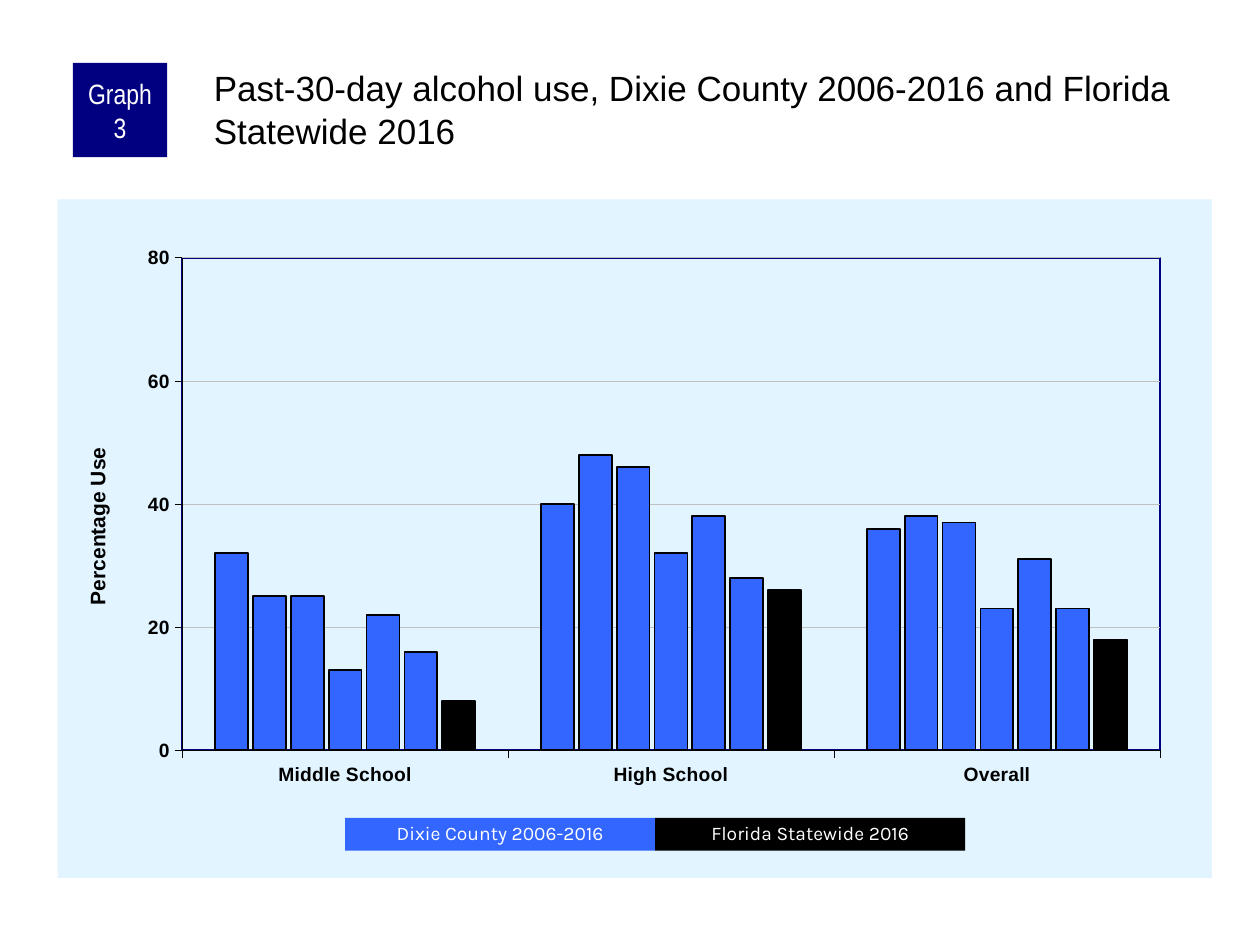
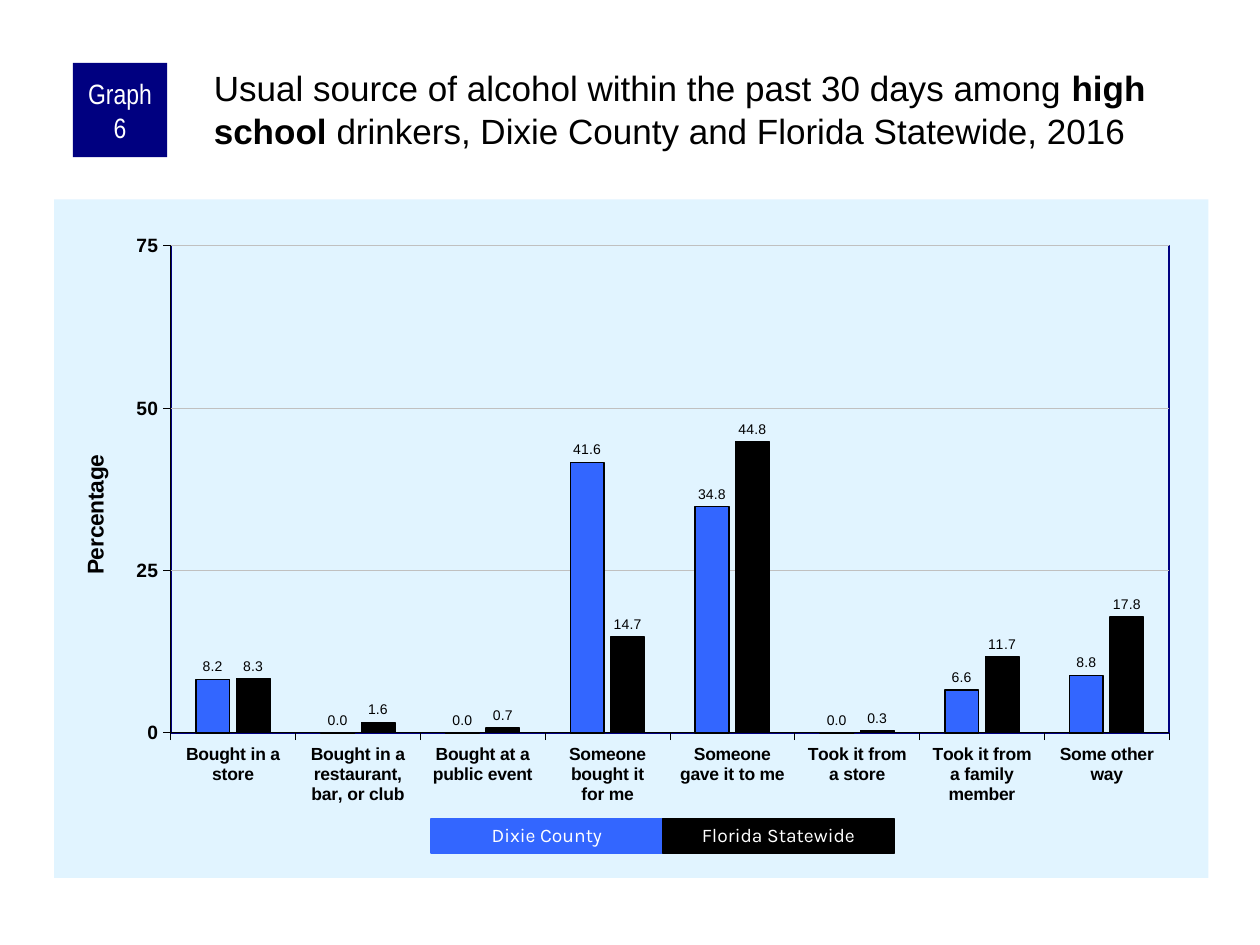
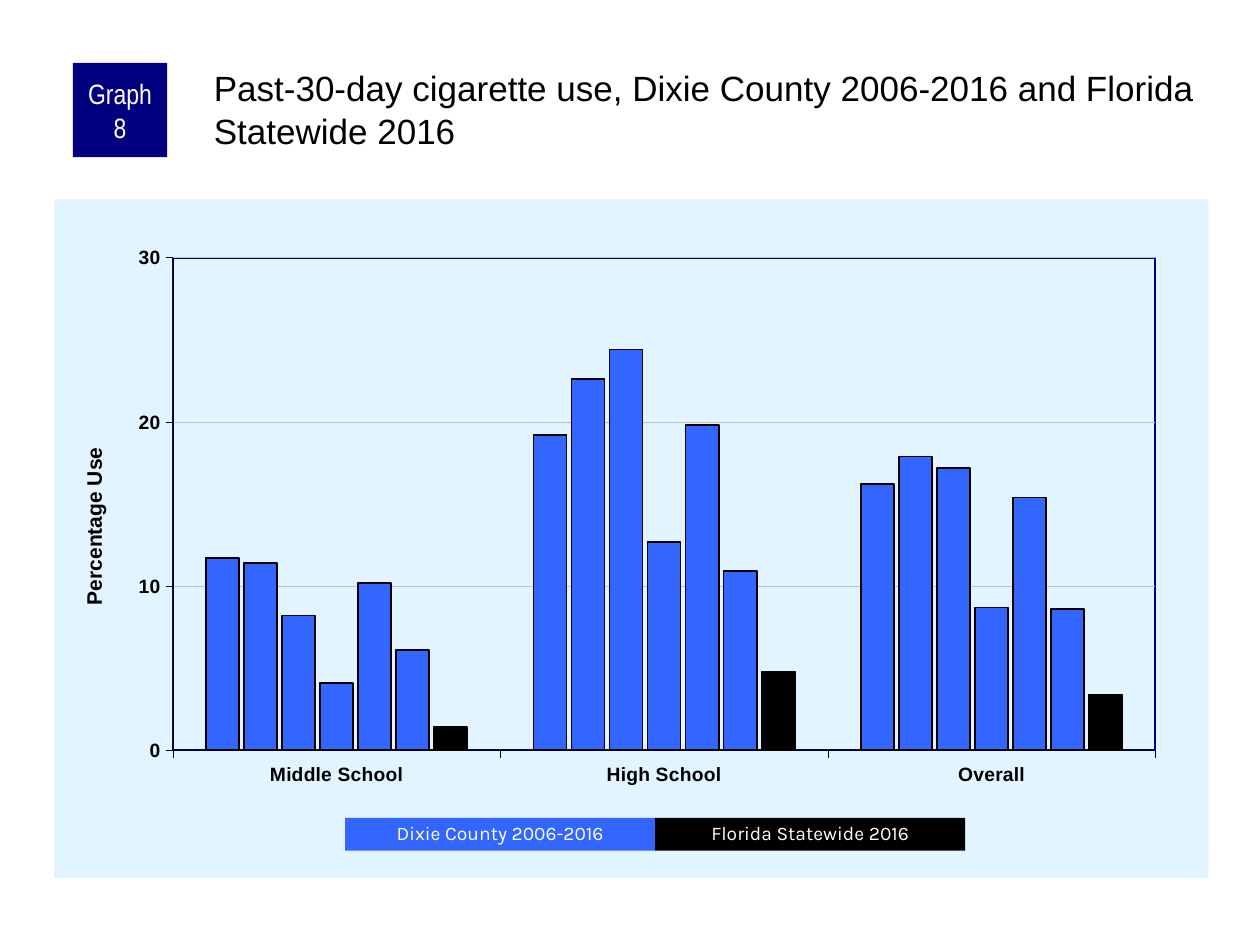
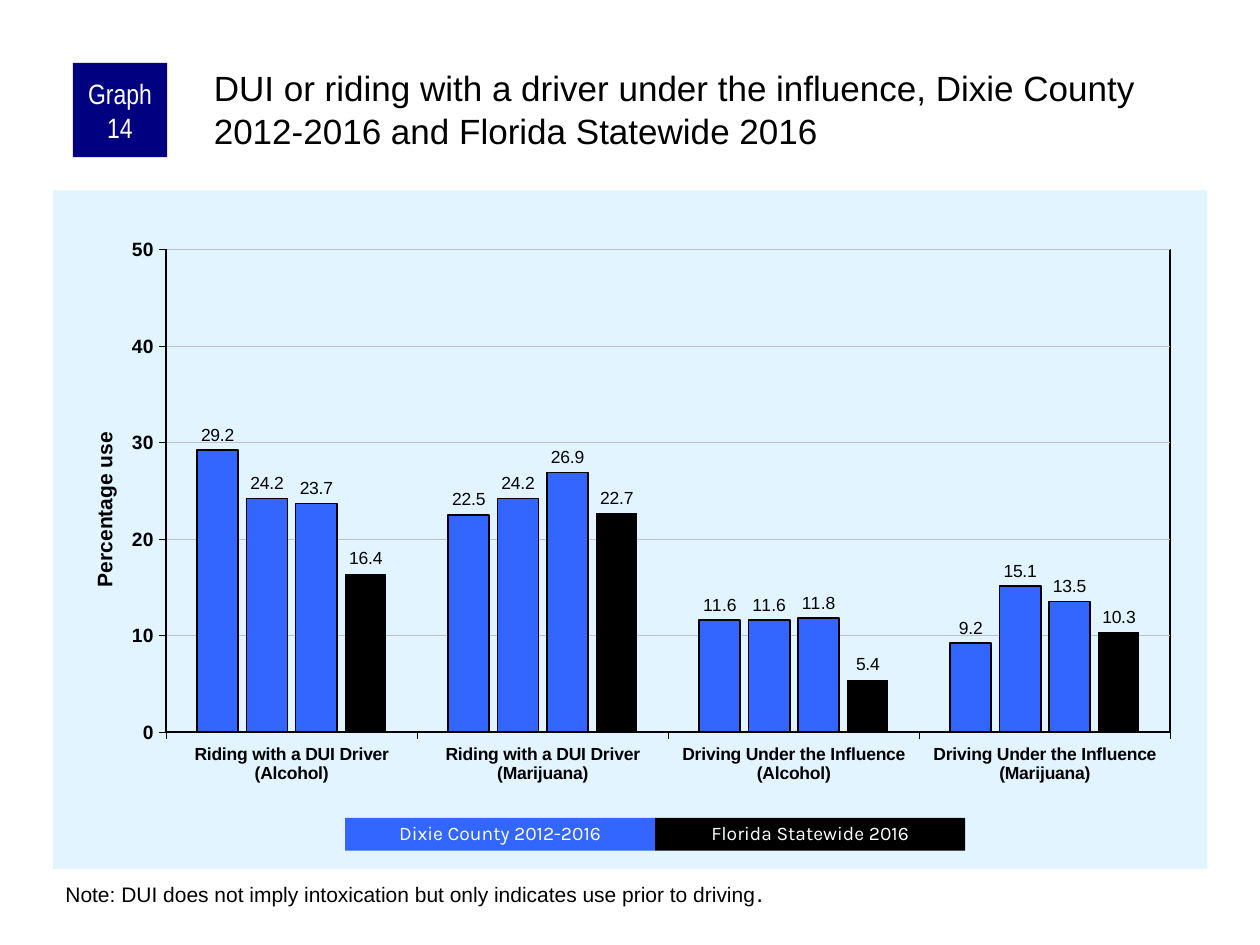
from itertools import cycle

from pptx import Presentation
from pptx import util as u
from pptx.chart.data import CategoryChartData
from pptx.dml.color import RGBColor
from pptx.enum import chart as ch, shapes, text
from pptx.oxml import parse_xml
from pptx.oxml.ns import nsdecls, qn

NAVY, BLUE, BLACK, WHITE = "000080", "3366FF", "000000", "FFFFFF"
PALE, GREY = "E1F4FF", "C0C0C0"
MID, TOP = text.MSO_ANCHOR.MIDDLE, text.MSO_ANCHOR.TOP
LEFT, CENTER = text.PP_ALIGN.LEFT, text.PP_ALIGN.CENTER


def rgb(code):
    return RGBColor.from_string(code)


def put(obj, **vals):
    for key, val in vals.items():
        setattr(obj, key, val)


def ink(font, size, color=BLACK, bold=False, name="Arial"):
    put(font, size=u.Pt(size), bold=bold, name=name)
    font.color.rgb = rgb(color)


def stroke(line, color, width):
    line.color.rgb = rgb(color)
    line.width = u.Pt(width)


def place(shape, left, top, width, height):
    put(shape, left=u.Cm(left), top=u.Cm(top), width=u.Cm(width), height=u.Cm(height))


def paint(fill=None, line=None):
    """Chart area properties: a fill, and a one-point line."""
    def part(color):
        if color is None:
            return "<a:noFill/>"
        return f'<a:solidFill><a:srgbClr val="{color}"/></a:solidFill>'
    return parse_xml(f'<c:spPr {nsdecls("c", "a")}>{part(fill)}'
                     f'<a:ln w="12700">{part(line)}</a:ln></c:spPr>')


def lay(elem, index, inner=False, **spots):
    """Fix the place of a chart part, in fractions of the chart."""
    old = elem.find(qn("c:layout"))
    if old is not None:
        elem.remove(old)
    modes = '<c:layoutTarget val="inner"/>' if inner else ""
    modes += '<c:xMode val="edge"/><c:yMode val="edge"/>'
    vals = "".join(f'<c:{key} val="{val}"/>' for key, val in spots.items())
    elem.insert(index, parse_xml(f'<c:layout {nsdecls("c")}><c:manualLayout>'
                                 f'{modes}{vals}</c:manualLayout></c:layout>'))


class Deck:
    def __init__(self):
        self.prs = Presentation()
        put(self.prs, slide_width=u.Cm(25.4), slide_height=u.Cm(19.05))
        self.slide = None

    def page(self, number, title):
        self.slide = self.prs.slides.add_slide(self.prs.slide_layouts[5])
        self.title(title)
        self.badge(f"Graph {number}")

    def label(self, shape, runs, align=LEFT, anchor=TOP, pads=None, gap=None):
        """Runs are (text, font settings) pairs."""
        frame = shape.text_frame
        put(frame, word_wrap=True, vertical_anchor=anchor,
            auto_size=text.MSO_AUTO_SIZE.NONE)
        sides = ("margin_left", "margin_top", "margin_right", "margin_bottom")
        if pads:
            put(frame, **{side: u.Cm(pad) for side, pad in zip(sides, pads)})
        para = frame.paragraphs[0]
        put(para, alignment=align, line_spacing=gap)
        for words, style in runs:
            run = para.add_run()
            run.text = words
            ink(run.font, **style)

    def title(self, words):
        """Words between asterisks are bold."""
        shape = self.slide.shapes.title
        place(shape, 4.23, 1.27, 20.11, 2.12)
        runs = [(part, dict(size=20, bold=bold))
                for part, bold in zip(words.split("*"), cycle((False, True)))]
        self.label(shape, runs, pads=(0.08, 0.08, 0, 0))

    def block(self, spot, color, words, size, name, edge=None, **style):
        shape = self.slide.shapes.add_shape(shapes.MSO_SHAPE.RECTANGLE, 0, 0, 0, 0)
        place(shape, *spot)
        shape.shadow.inherit = False
        shape.fill.solid()
        shape.fill.fore_color.rgb = rgb(color)
        if edge:
            stroke(shape.line, color, edge)
        else:
            shape.line.fill.background()
        font = dict(size=size, name=name, color=WHITE)
        self.label(shape, [(words, font)], CENTER, MID, **style)

    def badge(self, words):
        self.block((1.47, 1.27, 1.9, 1.9), NAVY, words, 16, "Arial Narrow",
                   pads=(0.13, 0, 0.13, 0))

    def legend(self, names, left=6.96, top=16.49, width=6.25, height=0.66, edge=None):
        for i, (name, color) in enumerate(zip(names, (BLUE, BLACK))):
            self.block((left + i * width, top, width, height), color, name,
                       11, "Karla", edge=edge, gap=0.9)

    def note(self, runs):
        box = self.slide.shapes.add_textbox(0, 0, 0, 0)
        place(box, 1.07, 17.58, 23.28, 0.87)
        self.label(box, [(words, dict(size=size)) for words, size in runs])

    def chart(self, cats, rows, spot, plot, peak, step, label, at, size=12,
              base=8, cat=11, gap=200, lap=-15, tags=None, edges=None, frame=NAVY):
        data = CategoryChartData()
        data.categories = cats
        for i, row in enumerate(rows, 1):
            data.add_series(f"Series {i}", row)
        left, top = spot
        kind = ch.XL_CHART_TYPE.COLUMN_CLUSTERED
        area = [u.Cm(n) for n in (left, top, 23.27, 13.68)]
        chart = self.slide.shapes.add_chart(kind, *area, data).chart
        put(chart, has_legend=False, has_title=False)
        ink(chart.font, base)
        self.bars(chart.plots[0], edges or [1] * len(rows), gap, lap, tags)
        self.axes(chart, cat, peak, step)

        # Axis title
        head = chart.value_axis.axis_title
        run = head.text_frame.paragraphs[0].add_run()
        run.text = label
        ink(run.font, size, bold=True)
        lay(head.element, 1, x=at[0], y=at[1])

        # Background and plot frame
        root = chart.element.find(qn("c:chart"))
        root.addnext(paint(PALE))
        zone = root.find(qn("c:plotArea"))
        lay(zone, 0, inner=True, **dict(zip("xywh", plot)))
        zone.append(paint(line=frame))

    def bars(self, plot, edges, gap, lap, tags):
        put(plot, gap_width=gap, overlap=lap, vary_by_categories=False)
        last = len(edges) - 1
        for i, (row, edge) in enumerate(zip(plot.series, edges)):
            row.invert_if_negative = False
            row.format.fill.solid()
            row.format.fill.fore_color.rgb = rgb(BLACK if i == last else BLUE)
            if edge:
                stroke(row.format.line, BLACK, edge)
            else:
                row.format.line.fill.background()
            if tags:
                labels = row.data_labels
                put(labels, show_value=True, number_format="0.0",
                    number_format_is_linked=False,
                    position=ch.XL_LABEL_POSITION.OUTSIDE_END)
                ink(labels.font, tags)

    def axes(self, chart, cat, peak, step):
        for axis, size in ((chart.category_axis, cat), (chart.value_axis, 11)):
            put(axis, major_tick_mark=ch.XL_TICK_MARK.OUTSIDE,
                minor_tick_mark=ch.XL_TICK_MARK.NONE)
            ink(axis.tick_labels.font, size, bold=True)
            stroke(axis.format.line, BLACK, 0.25)
        put(axis, minimum_scale=0, maximum_scale=peak, major_unit=step,
            has_major_gridlines=True)
        stroke(axis.major_gridlines.format.line, GREY, 0.25)


def main():
    deck = Deck()
    levels = ["Middle School", "High School", "Overall"]
    trend = ["Dixie County 2006-2016", "Florida Statewide 2016"]
    paired = dict(cat=10, base=11.5, gap=150, lap=-20)

    # Alcohol use
    deck.page(3, "Past-30-day alcohol use, Dixie County 2006-2016 "
                 "and Florida Statewide 2016")
    rows = [(32, 40, 36), (25, 48, 38), (25, 46, 37), (13, 32, 23),
            (22, 38, 31), (16, 28, 23), (8, 26, 18)]
    deck.chart(levels, rows, (1.16, 4.02), (0.108, 0.086, 0.847, 0.726),
               80, 20, "Percentage Use", (0.02, 0.36))
    deck.legend(trend)

    # Sources of alcohol
    deck.page(6, "Usual source of alcohol within the past 30 days among *high "
                 "school* drinkers, Dixie County and Florida Statewide, 2016")
    ways = ["Bought in a store", "Bought in a restaurant, bar, or club",
            "Bought at a public event", "Someone bought it\nfor me",
            "Someone\ngave it to me", "Took it from\na store",
            "Took it from\na family member", "Some other way"]
    rows = [(8.2, 0, 0, 41.6, 34.8, 0, 6.6, 8.8),
            (8.3, 1.6, 0.7, 14.7, 44.8, 0.3, 11.7, 17.8)]
    deck.chart(ways, rows, (1.09, 4.02), (0.101, 0.068, 0.865, 0.718),
               75, 25, "Percentage", (0.02, 0.37), size=13, tags=8,
               edges=(1, 0.75), **paired)
    deck.legend(["Dixie County", "Florida Statewide"],
                8.69, 16.51, 4.67, 0.69, edge=0.75)

    # Cigarette use
    deck.page(8, "Past-30-day cigarette use, Dixie County 2006-2016 "
                 "and Florida Statewide 2016")
    rows = [(11.7, 19.2, 16.2), (11.4, 22.6, 17.9), (8.2, 24.4, 17.2),
            (4.1, 12.7, 8.7), (10.2, 19.8, 15.4), (6.1, 10.9, 8.6),
            (1.4, 4.8, 3.4)]
    deck.chart(levels, rows, (1.09, 4.02), (0.103, 0.086, 0.851, 0.726),
               30, 10, "Percentage Use", (0.02, 0.36))
    deck.legend(trend)

    # Driving under the influence
    deck.page(14, "DUI or riding with a driver under the influence, Dixie County "
                  "2012-2016 and Florida Statewide 2016")
    acts = [f"{act} ({drug})"
            for act in ("Riding with a DUI Driver", "Driving Under the Influence")
            for drug in ("Alcohol", "Marijuana")]
    rows = [(29.2, 22.5, 11.6, 9.2), (24.2, 24.2, 11.6, 15.1),
            (23.7, 26.9, 11.8, 13.5), (16.4, 22.7, 5.4, 10.3)]
    deck.chart(acts, rows, (1.07, 3.84), (0.098, 0.087, 0.87, 0.711),
               50, 10, "Percentage use", (0.03, 0.35), tags=10,
               edges=(1, 1, 0.75, 0), frame=BLACK, **paired)
    deck.note([("Note: DUI does not imply intoxication but only indicates "
                "use prior to driving", 12), (".", 14)])
    deck.legend(["Dixie County 2012-2016", "Florida Statewide 2016"])

    deck.prs.save("out.pptx")


if __name__ == "__main__":
    main()
